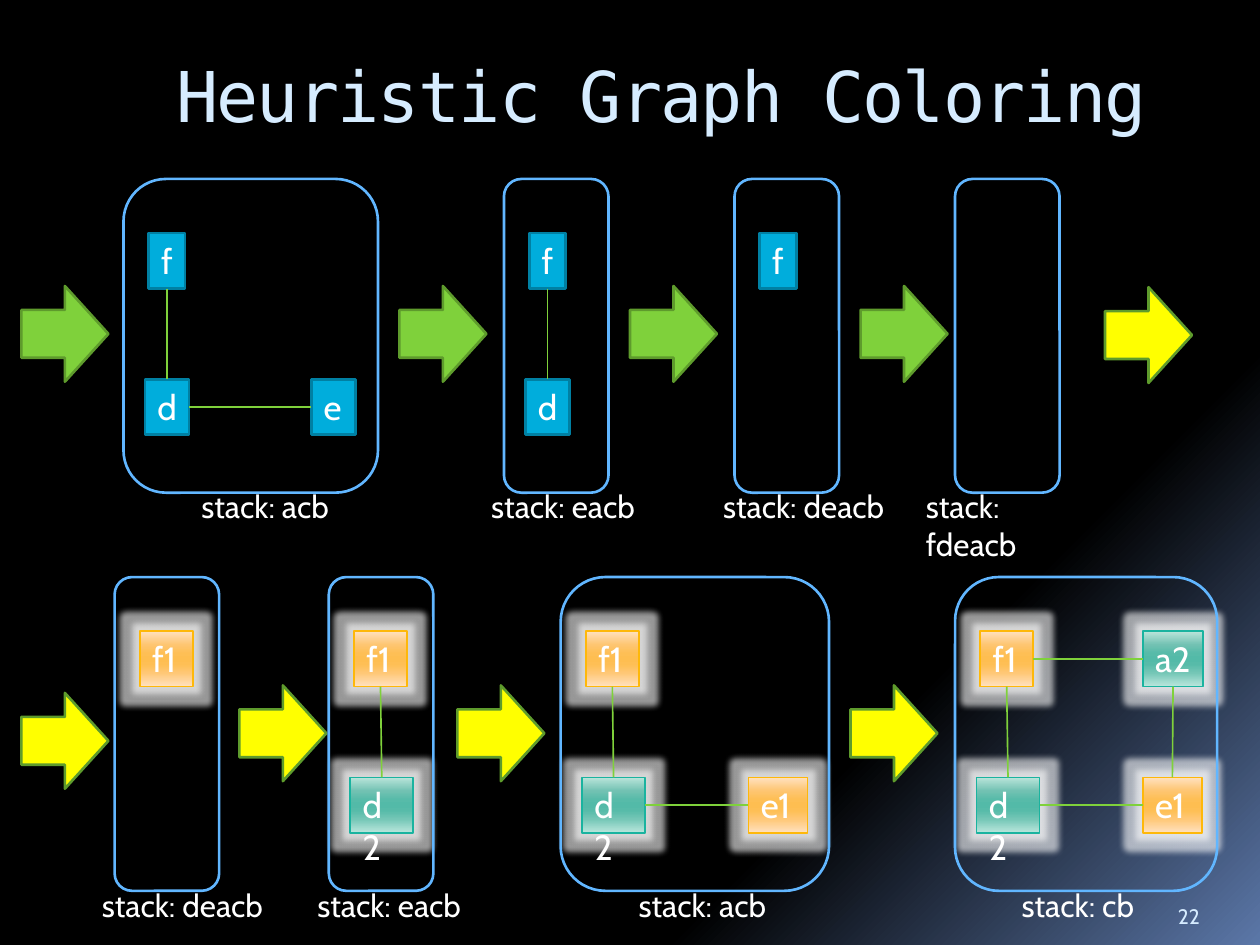
from lxml.etree import SubElement
from pptx import Presentation
from pptx.dml.color import RGBColor
from pptx.enum.shapes import MSO_CONNECTOR, MSO_SHAPE
from pptx.enum.text import MSO_ANCHOR, PP_ALIGN
from pptx.oxml.ns import qn
from pptx.util import Inches, Pt

WHITE = RGBColor(0xFF, 0xFF, 0xFF)
PALE_BLUE = RGBColor(0xD6, 0xEC, 0xFF)
PANEL_BLUE = RGBColor(0x61, 0xB6, 0xFF)
NODE_BLUE = RGBColor(0x00, 0xAD, 0xDC)
NODE_EDGE = RGBColor(0x00, 0x80, 0xA3)
GREEN = RGBColor(0x7F, 0xD1, 0x3B)
DARK_GREEN = RGBColor(0x5E, 0x9B, 0x2C)
YELLOW = RGBColor(0xFF, 0xFF, 0x00)
ORANGE = RGBColor(0xFE, 0xB8, 0x0A)
TEAL = RGBColor(0x1A, 0xB3, 0x9F)

BACKDROP = [(65, "000000"), (73, "000000"), (100, "5B77A8")]
ORANGE_STOPS = [(0, "FFE1BF"), (25, "FEC570"), (40, "FEBF55"), (50, "FEBE51"),
                (60, "FEBF55"), (75, "FFC775"), (100, "FFE1BF")]
TEAL_STOPS = [(0, "BBE5DB"), (25, "71C1B2"), (40, "57BBA9"), (50, "53BAA8"),
              (60, "57BBA9"), (75, "74C6B6"), (100, "B9E6DC")]
COLORINGS = {"1": (ORANGE, ORANGE_STOPS), "2": (TEAL, TEAL_STOPS)}

NODE_HEIGHT = 0.44
NODE_PLACES = {"f": (0.2, 0.43), "a": (1.49, 0.43), "d": (0.17, 1.59), "e": (1.49, 1.59)}
NODE_WIDTHS = {"f": 0.29, "d": 0.35, "e": 0.35,
               "f1": 0.42, "a2": 0.48, "d2": 0.5, "e1": 0.47}


def set_gradient(owner, fill, stops, angle):
    """Give a slide or shape a linear gradient with any number of stops."""
    fill.gradient()
    gradient = owner.element.find(".//" + qn("a:gradFill"))
    for child in list(gradient):
        gradient.remove(child)
    stop_list = SubElement(gradient, qn("a:gsLst"))
    for position, color in stops:
        stop = SubElement(stop_list, qn("a:gs"), pos=str(position * 1000))
        SubElement(stop, qn("a:srgbClr"), val=color)
    SubElement(gradient, qn("a:lin"), ang=str(angle * 60000), scaled="0")


def add_glow(shape):
    """Surround a shape with a soft white halo."""
    effects = shape.element.spPr.find(qn("a:effectLst"))
    glow = SubElement(effects, qn("a:glow"), rad=str(Inches(0.1)))
    color = SubElement(glow, qn("a:srgbClr"), val="FFFFFF")
    SubElement(color, qn("a:alpha"), val="60000")


def write(shape, text, size, color=WHITE, font="Cabin", wrap=False):
    """Write one left-aligned line into a shape and return its paragraph."""
    frame = shape.text_frame
    frame.word_wrap = wrap
    frame.vertical_anchor = MSO_ANCHOR.TOP
    para = frame.paragraphs[0]
    para.text = text
    para.alignment = PP_ALIGN.LEFT
    para.font.size = Pt(size)
    para.font.name = font
    para.font.color.rgb = color
    return para


def add_outline(page, kind, left, top, width, height, line, weight=1.5):
    """Add an unfilled, shadowless preset shape."""
    shape = page.shapes.add_shape(kind, Inches(left), Inches(top), Inches(width), Inches(height))
    shape.shadow.inherit = False
    shape.fill.background()
    shape.line.color.rgb = line
    shape.line.width = Pt(weight)
    return shape


def add_arrow(page, left, top, color):
    """Add a block arrow leading to the next stage."""
    arrow = add_outline(page, MSO_SHAPE.RIGHT_ARROW, left, top, 0.69, 0.76, DARK_GREEN)
    arrow.fill.solid()
    arrow.fill.fore_color.rgb = color


def add_node(page, left, top, name):
    """Add a graph node, blue or in its assigned register colour."""
    line, stops = COLORINGS.get(name[1:], (NODE_EDGE, None))
    node = add_outline(page, MSO_SHAPE.RECTANGLE, left, top, NODE_WIDTHS[name], NODE_HEIGHT,
                       line, 0.94 if stops else 1.5)
    if stops:
        set_gradient(node, node.fill, stops, 90)
        add_glow(node)
    else:
        node.fill.solid()
        node.fill.fore_color.rgb = NODE_BLUE
    narrow = name == "d2"
    write(node, name, 20, wrap=narrow)
    if narrow:
        node.text_frame.margin_right = Inches(0.15)
    return node


def add_edge(page, start, end):
    """Join two nodes between their facing sides."""
    if abs(start.top - end.top) < Inches(0.1):
        middle = start.top + start.height // 2
        points = start.left + start.width, middle, end.left, middle
    else:
        points = (start.left + start.width // 2, start.top + start.height,
                  end.left + end.width // 2, end.top)
    edge = page.shapes.add_connector(MSO_CONNECTOR.STRAIGHT, *points)
    edge.line.color.rgb = GREEN
    edge.line.width = Pt(0.94)
    SubElement(edge.element.spPr, qn("a:effectLst"))


def add_stage(page, left, top, width, stack, stack_left, names, edges):
    """Draw one stage: its graph, the panel round it and the stack below."""
    nodes = {}
    for name in names:
        across, down = NODE_PLACES[name[0]]
        nodes[name[0]] = add_node(page, left + across, top + down, name)
    for start, end in edges:
        add_edge(page, nodes[start], nodes[end])
    add_outline(page, MSO_SHAPE.ROUNDED_RECTANGLE, left, top, width, 2.49, PANEL_BLUE)
    label = page.shapes.add_textbox(Inches(stack_left), Inches(top + 2.4), Inches(1.5), Inches(0.4))
    write(label, f"stack: {stack}", 18)


def add_heading(page, left, top, width, height):
    """Add the centred slide title."""
    title = page.shapes.add_textbox(Inches(left), Inches(top), Inches(width), Inches(height))
    para = write(title, "Heuristic Graph Coloring", 40, PALE_BLUE, "DejaVu Sans Mono", True)
    para.alignment = PP_ALIGN.CENTER
    para.runs[0].font._element.set("spc", "-100")
    title.text_frame.vertical_anchor = MSO_ANCHOR.MIDDLE


def add_page_number(page, left, top, width, height):
    """Add the page number in the lower corner."""
    number = page.shapes.add_textbox(Inches(left), Inches(top), Inches(width), Inches(height))
    write(number, "22", 12, PALE_BLUE)
    number.text_frame.vertical_anchor = MSO_ANCHOR.BOTTOM


def add_simplify_row(page, top):
    """Draw the stages that push nodes onto the stack."""
    for left in (0.17, 3.17, 5, 6.83):
        add_arrow(page, left, top + 0.85, GREEN)
    add_arrow(page, 8.77, top + 0.86, YELLOW)
    add_stage(page, 0.98, top, 2.02, "acb", 1.5, ["f", "d", "e"], ["fd", "de"])
    add_stage(page, 4, top, 0.83, "eacb", 3.8, ["f", "d"], ["fd"])
    add_stage(page, 5.83, top, 0.83, "deacb", 5.64, ["f"], [])
    add_stage(page, 7.58, top, 0.83, "fdeacb", 7.25, [], [])


def add_select_row(page, top):
    """Draw the stages that pop nodes and colour them."""
    add_arrow(page, 0.17, top + 0.92, YELLOW)
    for left in (1.9, 3.63, 6.75):
        add_arrow(page, left, top + 0.86, YELLOW)
    add_stage(page, 0.91, top, 0.83, "deacb", 0.71, ["f1"], [])
    add_stage(page, 2.61, top, 0.83, "eacb", 2.42, ["f1", "d2"], ["fd"])
    add_stage(page, 4.45, top, 2.13, "acb", 4.97, ["f1", "d2", "e1"], ["fd", "de"])
    add_stage(page, 7.58, top, 2.08, "cb", 8.01, ["f1", "a2", "d2", "e1"],
              ["fa", "fd", "de", "ae"])


def main():
    """Build and save the deck."""
    deck = Presentation()
    deck.slide_width, deck.slide_height = Inches(10), Inches(7.5)
    page = deck.slides.add_slide(deck.slide_layouts[6])
    set_gradient(page, page.background.fill, BACKDROP, 45)
    add_page_number(page, 9.25, 7.02, 0.5, 0.4)
    add_simplify_row(page, 1.42)
    add_select_row(page, 4.58)
    add_heading(page, 1, 0.25, 8.5, 1)
    deck.save("out.pptx")


if __name__ == "__main__":
    main()
